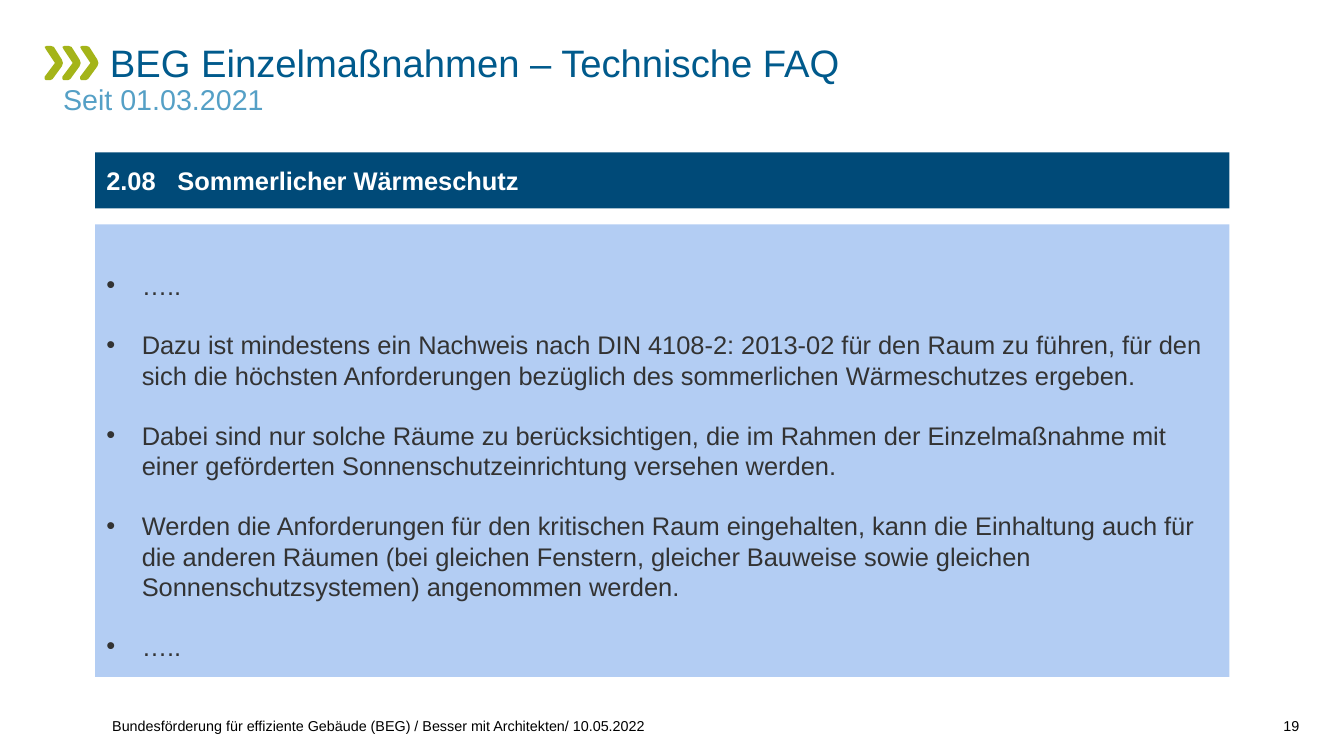
from lxml.etree import SubElement
from pptx import Presentation
from pptx.dml.color import RGBColor
from pptx.enum.shapes import MSO_SHAPE
from pptx.enum.text import MSO_ANCHOR, PP_ALIGN
from pptx.oxml.ns import qn
from pptx.util import Inches, Pt

FONT = "Arial"
GREEN, NAVY, PALE = "A4B419", "004A78", "B3CDF3"
POINTS = [
    "…..",
    "Dazu ist mindestens ein Nachweis nach DIN 4108-2: 2013-02 für den Raum "
    "zu führen, für den sich die höchsten Anforderungen bezüglich des "
    "sommerlichen Wärmeschutzes ergeben.",
    "Dabei sind nur solche Räume zu berücksichtigen, die im Rahmen der "
    "Einzelmaßnahme mit einer geförderten Sonnenschutzeinrichtung versehen "
    "werden.",
    "Werden die Anforderungen für den kritischen Raum eingehalten, kann die "
    "Einhaltung auch für die anderen Räumen (bei gleichen Fenstern, gleicher "
    "Bauweise sowie gleichen Sonnenschutzsystemen) angenommen werden.",
    "…..",
]
# Outline of one chevron, relative to its top left corner
CHEVRON = [
    (0.02, 0), (0.05, 0), (0.08, 0.01), (0.15, 0.12), (0.16, 0.15),
    (0.15, 0.18), (0.07, 0.29), (0.05, 0.3), (0.01, 0.3), (0, 0.29),
    (0, 0.27), (0.09, 0.15), (0.01, 0.03), (0, 0.01),
]


def color(code):
    return RGBColor.from_string(code)


def paint(shape, code):
    shape.shadow.inherit = False
    shape.fill.solid()
    shape.fill.fore_color.rgb = color(code)
    shape.line.fill.background()


def write(para, text, size, code, bold=False):
    run = para.add_run()
    run.text = text
    font = run.font
    font.name, font.size, font.bold = FONT, Pt(size), bold
    font.color.rgb = color(code)


def label(slide, box, text, size, code, anchor=MSO_ANCHOR.TOP):
    """Add a one-line text box without insets and return its paragraph."""
    frame = slide.shapes.add_textbox(*map(Inches, box)).text_frame
    frame.word_wrap = True
    frame.vertical_anchor = anchor
    frame.margin_left = frame.margin_right = 0
    frame.margin_top = frame.margin_bottom = 0
    para = frame.paragraphs[0]
    write(para, text, size, code)
    return para


def panel(slide, box, code):
    """Add a filled rectangle and return its text frame."""
    shape = slide.shapes.add_shape(MSO_SHAPE.RECTANGLE, *map(Inches, box))
    paint(shape, code)
    frame = shape.text_frame
    frame.word_wrap = True
    frame.vertical_anchor = MSO_ANCHOR.MIDDLE
    return frame


def chevrons(slide, left, top):
    for num in range(3):
        dots = [(Inches(left + num * 0.155 + x), Inches(top + y))
                for x, y in CHEVRON]
        form = slide.shapes.build_freeform(*dots[0])
        form.add_line_segments(dots[1:])
        paint(form.convert_to_shape(), GREEN)


def header(slide, left, top, width):
    chevrons(slide, left - 0.16, top + 0.03)
    title = label(slide, (left, top, width, 0.41),
                  "BEG Einzelmaßnahmen – Technische FAQ", 24, "005A8C")
    title._p.get_or_add_pPr().set("indent", str(Inches(0.41)))
    sub = label(slide, (left, top + 0.37, width, 0.36),
                "Seit 01.03.2021", 18, "55A0C6")
    title.line_spacing = sub.line_spacing = 0.95


def topic(slide, box):
    para = panel(slide, box, NAVY).paragraphs[0]
    para.alignment = PP_ALIGN.LEFT
    tabs = SubElement(para._p.get_or_add_pPr(), qn("a:tabLst"))
    SubElement(tabs, qn("a:tab"), pos=str(Inches(0.62)), algn="l")
    write(para, "2.08\tSommerlicher Wärmeschutz", 16, "FFFFFF", True)


def answer(slide, box):
    frame = panel(slide, box, PALE)
    frame.margin_top = Inches(0.31)
    for num, text in enumerate(POINTS):
        para = frame.add_paragraph() if num else frame.paragraphs[0]
        props = para._p.get_or_add_pPr()
        props.set("marL", str(Inches(0.31)))
        props.set("indent", str(-Inches(0.31)))
        SubElement(props, qn("a:buFont"), typeface=FONT)
        SubElement(props, qn("a:buChar"), char="•")
        para.alignment = PP_ALIGN.LEFT
        if num:
            para.space_before = Pt(18.4)
        write(para, text, 16, "333333")


def footer(slide, left, top, width):
    label(slide, (left, top, 9.9, 0.28),
          "Bundesförderung für effiziente Gebäude (BEG) / "
          "Besser mit Architekten/ 10.05.2022",
          9, "000000", MSO_ANCHOR.BOTTOM)
    page = label(slide, (left + width - 0.41, top, 0.41, 0.28),
                 "19", 9, "000000", MSO_ANCHOR.BOTTOM)
    page.alignment = PP_ALIGN.RIGHT


def main():
    deck = Presentation()
    deck.slide_width, deck.slide_height = Inches(11.73), Inches(6.6)
    slide = deck.slides.add_slide(deck.slide_layouts[6])
    header(slide, 0.55, 0.37, 10.79)
    topic(slide, (0.83, 1.33, 9.9, 0.49))
    answer(slide, (0.83, 1.96, 9.9, 3.95))
    footer(slide, 0.98, 6.13, 10.36)
    deck.save("out.pptx")


if __name__ == "__main__":
    main()
